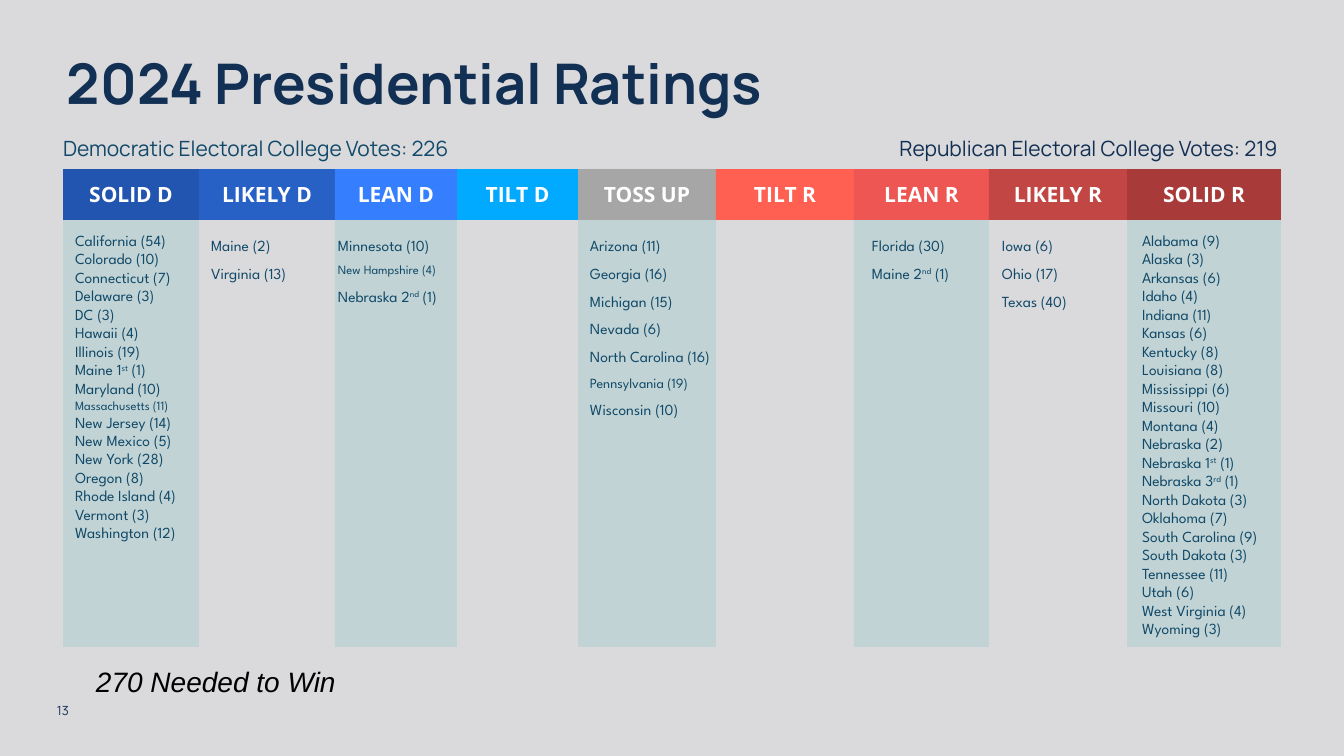
from lxml import etree
from pptx import Presentation
from pptx.dml.color import RGBColor
from pptx.enum.shapes import MSO_SHAPE
from pptx.enum.text import MSO_ANCHOR, PP_ALIGN
from pptx.oxml.ns import qn

RECT = MSO_SHAPE.RECTANGLE
LEFT, CENTER, RIGHT = PP_ALIGN.LEFT, PP_ALIGN.CENTER, PP_ALIGN.RIGHT
TOP, MIDDLE, BOTTOM = MSO_ANCHOR.TOP, MSO_ANCHOR.MIDDLE, MSO_ANCHOR.BOTTOM

BACKGROUND = RGBColor(0xDA, 0xD9, 0xDB)
NAVY = RGBColor(0x12, 0x30, 0x54)
TEAL = RGBColor(0x10, 0x49, 0x69)
PANEL = RGBColor(0x36, 0xB1, 0xB0)
WHITE = RGBColor(0xFF, 0xFF, 0xFF)
BLACK = RGBColor(0, 0, 0)

TITLE = "2024 Presidential Ratings"
DEM_VOTES = "Democratic Electoral College Votes: 226"
REP_VOTES = "Republican Electoral College Votes: 219"
NEEDED = "270 Needed to Win"
PAGE = "13"

SOLID_D = [
    "California (54)", "Colorado (10)", "Connecticut (7)", "Delaware (3)",
    "DC (3)", "Hawaii (4)", "Illinois (19)", "Maine 1^st^ (1)",
    "Maryland (10)", "Massachusetts (11)", "New Jersey (14)",
    "New Mexico (5)", "New York (28)", "Oregon (8)", "Rhode Island (4)",
    "Vermont (3)", "Washington (12)",
]
LEAN_D = ["Minnesota (10)", "New Hampshire (4)", "Nebraska 2^nd^ (1)"]
TOSS_UP = [
    "Arizona (11)", "Georgia (16)", "Michigan (15)", "Nevada (6)",
    "North Carolina (16)", "Pennsylvania (19)", "Wisconsin (10)",
]
SOLID_R = [
    "Alabama (9)", "Alaska (3)", "Arkansas (6)", "Idaho (4)", "Indiana (11)",
    "Kansas (6)", "Kentucky (8)", "Louisiana (8)", "Mississippi (6)",
    "Missouri (10)", "Montana (4)", "Nebraska (2)", "Nebraska 1^st^ (1)",
    "Nebraska 3^rd^ (1)", "North Dakota (3)", "Oklahoma (7)",
    "South Carolina (9)", "South Dakota (3)", "Tennessee (11)", "Utah (6)",
    "West Virginia (4)", "Wyoming (3)",
]
SMALL = {"Massachusetts (11)": 9, "New Hampshire (4)": 9, "Pennsylvania (19)": 10}

RATINGS = [
    ("SOLID D", RGBColor(0x22, 0x55, 0xAF), 136, 12, SOLID_D),
    ("LIKELY D", RGBColor(0x28, 0x61, 0xC5), 136, 12, ["Maine (2)", "Virginia (13)"]),
    ("LEAN D", RGBColor(0x35, 0x7F, 0xFF), 122, 3, LEAN_D),
    ("TILT D", RGBColor(0x02, 0xAA, 0xFF), 121, 0, []),
    ("TOSS UP", RGBColor(0xA6, 0xA6, 0xA6), 138, 12, TOSS_UP),
    ("TILT R", RGBColor(0xFF, 0x60, 0x51), 138, 0, []),
    ("LEAN R", RGBColor(0xEE, 0x56, 0x54), 135, 18, ["Florida (30)", "Maine 2^nd^ (1)"]),
    ("LIKELY R", RGBColor(0xC2, 0x46, 0x44), 138, 13, ["Iowa (6)", "Ohio (17)", "Texas (40)"]),
    ("SOLID R", RGBColor(0xA8, 0x3B, 0x39), 154, 15, SOLID_R),
]
GRID_LEFT, HEADER_TOP, HEADER_H, PANEL_H = 63, 169, 51, 427
PANEL_TOP = HEADER_TOP + HEADER_H


def px(n):
    return round(n * 914400 / 100.8)


def box(*at):
    return [px(n) for n in at]


def style(p, font, size, color, align=LEFT, spacing=1.0, bold=False, italic=False):
    p.alignment = align
    p.line_spacing = spacing
    p.font.name = font
    p.font.size = px(size * 1.4)
    p.font.color.rgb = color
    p.font.bold = bold
    p.font.italic = italic


def set_frame(tf, anchor=TOP, inset_x=0, inset_y=0):
    tf.word_wrap = True
    tf.vertical_anchor = anchor
    tf.margin_left = tf.margin_right = px(inset_x)
    tf.margin_top = tf.margin_bottom = px(inset_y)


def add_text(s, at, text, *look, anchor=TOP, inset=(0, 0), **options):
    tf = s.shapes.add_textbox(*box(*at)).text_frame
    set_frame(tf, anchor, *inset)
    tf.text = text
    style(tf.paragraphs[0], *look, **options)


def add_rect(s, at, color):
    sp = s.shapes.add_shape(RECT, *box(*at))
    sp.shadow.inherit = False
    sp.fill.solid()
    sp.fill.fore_color.rgb = color
    sp.line.fill.background()
    return sp


def add_panel(s, left, width):
    sp = add_rect(s, (left, PANEL_TOP, width, PANEL_H), PANEL)
    clr = next(sp._element.spPr.iter(qn("a:srgbClr")))
    etree.SubElement(clr, qn("a:alpha")).set("val", "15000")


def add_header(s, left, width, name, color):
    sp = add_rect(s, (left, HEADER_TOP, width, HEADER_H), color)
    tf = sp.text_frame
    set_frame(tf, MIDDLE, 5, 5)
    tf.text = name
    style(tf.paragraphs[0], "Open Sans", 15, WHITE, CENTER, bold=True)


def add_states(s, left, width, states, solid):
    top, line_h, spacing = (231, 19, 1.0) if solid else (227, 28, 1.5)
    tf = s.shapes.add_textbox(*box(left, top, width, line_h * len(states))).text_frame
    set_frame(tf)
    for i, state in enumerate(states):
        p = tf.add_paragraph() if i else tf.paragraphs[0]
        for j, part in enumerate(state.split("^")):
            r = p.add_run()
            r.text = part
            if j % 2:
                r._r.get_or_add_rPr().set("baseline", "30000")
        style(p, "League Spartan", SMALL.get(state, 11), TEAL, spacing=spacing)


def main():
    prs = Presentation()
    prs.slide_width, prs.slide_height = box(1344, 756)
    s = prs.slides.add_slide(prs.slide_layouts[5])
    s.background.fill.solid()
    s.background.fill.fore_color.rgb = BACKGROUND

    title = s.shapes.title
    title.left, title.top, title.width, title.height = box(57, 51, 1230, 75)
    set_frame(title.text_frame, TOP, 10, 5)
    title.text_frame.text = TITLE
    style(title.text_frame.paragraphs[0], "Manrope", 40, NAVY, spacing=0.9, bold=True)

    add_text(s, (63, 138, 450, 21), DEM_VOTES, "Manrope", 15, TEAL, spacing=0.9)
    add_text(s, (828, 138, 450, 21), REP_VOTES, "Manrope", 15, NAVY, RIGHT, spacing=0.9)

    left = GRID_LEFT
    for i, (name, color, width, indent, states) in enumerate(RATINGS):
        if i % 2 == 0:
            add_panel(s, left, width)
        add_header(s, left, width, name, color)
        if states:
            add_states(s, left + indent, width, states, name.startswith("SOLID"))
        left += width

    add_text(s, (86, 659, 492, 44), NEEDED, "Arial", 20, BLACK, italic=True, inset=(10, 5))
    add_text(s, (57, 688, 62, 30), PAGE, "Manrope", 9, NAVY, anchor=BOTTOM)
    prs.save("out.pptx")


if __name__ == "__main__":
    main()
